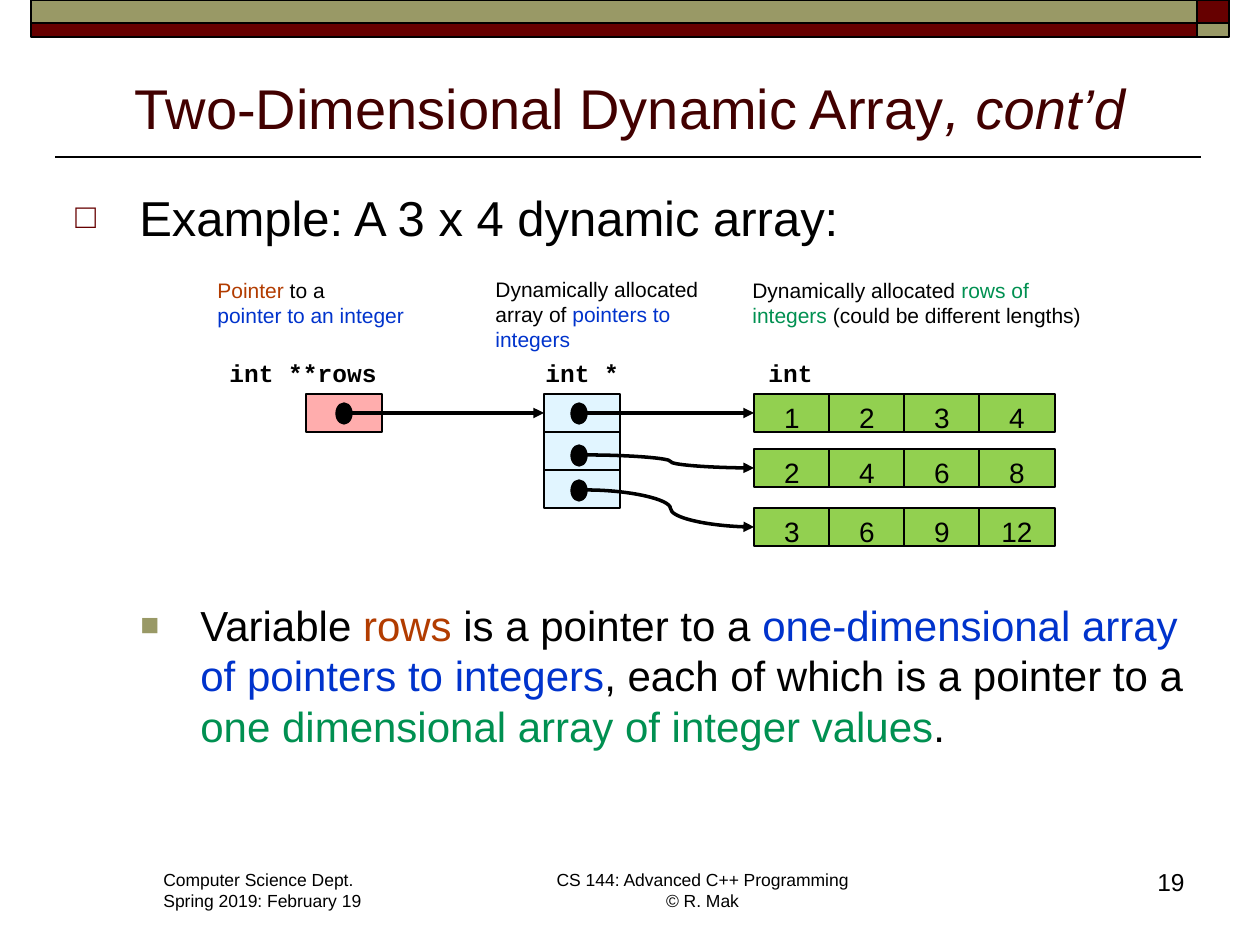
import lxml.etree
import pptx
import pptx.dml.color
import pptx.enum.shapes
import pptx.enum.text
import pptx.oxml.ns
import pptx.util

PX = 914400 / 126
HUE = {
    "black": "000000", "maroon": "660000", "olive": "999966", "title": "420000",
    "rust": "B23C00", "blue": "0033CC", "green": "009051",
    "pink": "FFADAD", "pale": "E1F5FF", "lime": "92D050",
}
RGB = pptx.dml.color.RGBColor.from_string
KIND = pptx.enum.shapes.MSO_SHAPE
LINK = pptx.enum.shapes.MSO_CONNECTOR
ALIGN = pptx.enum.text.PP_ALIGN
tag = pptx.oxml.ns.qn

deck = pptx.Presentation()
deck.slide_width = int(1260 * PX)
deck.slide_height = int(945 * PX)
slide = deck.slides.add_slide(deck.slide_layouts[5])
shapes = slide.shapes


def draw(kind, x, y, w, h, fill, line=0.75):
    shape = shapes.add_shape(kind, *[int(n * PX) for n in (x, y, w, h)])
    shape.shadow.inherit = False
    shape.fill.solid()
    shape.fill.fore_color.rgb = RGB(HUE[fill])
    shape.line.color.rgb = RGB(HUE["black"])
    shape.line.width = pptx.util.Pt(line)
    return shape


def write(x, y, w, h, paras, size, font="Arial", align=ALIGN.LEFT, bold=False, bullet=None):
    box = shapes.add_textbox(*[int(n * PX) for n in (x, y, w, h)])
    frame = box.text_frame
    frame.word_wrap = True
    for i, parts in enumerate(paras):
        para = frame.add_paragraph() if i else frame.paragraphs[0]
        para.alignment = align
        if bullet:
            char, hue, scale, left, hang = bullet
            props = para._p.get_or_add_pPr()
            props.set("marL", str(int(left * PX)))
            props.set("indent", str(int(-hang * PX)))
            clr = lxml.etree.SubElement(props, tag("a:buClr"))
            lxml.etree.SubElement(clr, tag("a:srgbClr"), val=HUE[hue])
            lxml.etree.SubElement(props, tag("a:buSzPct"), val=str(scale * 1000))
            lxml.etree.SubElement(props, tag("a:buFont"), typeface="Arial")
            lxml.etree.SubElement(props, tag("a:buChar"), char=char)
        for text, hue in parts:
            if text == "\n":
                para.add_line_break()
                continue
            run = para.add_run()
            run.text = text
            run.font.name = font
            run.font.size = pptx.util.Pt(size)
            run.font.bold = bold
            run.font.color.rgb = RGB(HUE[hue])


bars = [
    (1197, 0, 32, 23, "maroon"), (31, 0, 1166, 23, "olive"),
    (31, 23, 1166, 14, "maroon"), (1197, 23, 32, 14, "olive"),
]
for x, y, w, h, hue in bars:
    draw(KIND.RECTANGLE, x, y, w, h, hue, 1)

title = shapes.title
title.left, title.top, title.width, title.height = [int(n * PX) for n in (63, 57, 1134, 90)]
frame = title.text_frame
frame.text = "Two-Dimensional Dynamic Array"
frame.auto_size = pptx.enum.text.MSO_AUTO_SIZE.NONE
frame.vertical_anchor = pptx.enum.text.MSO_ANCHOR.BOTTOM
para = frame.paragraphs[0]
para.alignment = ALIGN.CENTER
tail = para.add_run()
tail.text = ", cont’d"
tail.font.italic = True
for run in para.runs:
    run.font.name = "Arial"
    run.font.size = pptx.util.Pt(32)
    run.font.color.rgb = RGB(HUE["title"])

write(63, 181, 1134, 70, [[("Example: A 3 x 4 dynamic array:", "black")]], 28,
      bullet=("□", "maroon", 70, 64, 64))
write(63, 593, 1140, 170, [[
    ("Variable ", "black"), ("rows", "rust"), (" is a pointer to a ", "black"),
    ("one-dimensional array of pointers to integers", "blue"),
    (", each of which is a pointer to a ", "black"),
    ("one dimensional array of integer values", "green"), (".", "black"),
]], 24, bullet=("■", "olive", 75, 125, 60))

write(205, 271, 220, 63, [[
    ("Pointer", "rust"), (" to a", "black"), ("\n", ""), ("pointer to an integer", "blue"),
]], 12)
write(483, 270, 236, 89, [
    [("Dynamically allocated", "black")],
    [("array of ", "black"), ("pointers to", "blue"), ("\n", ""), ("integers", "blue")],
], 12)
write(740, 271, 360, 63, [[
    ("Dynamically allocated ", "black"), ("rows of", "green"), ("\n", ""),
    ("integers", "green"), (" (could be different lengths)", "black"),
]], 12)
for x, w, code in [(217, 185, "int **rows"), (533, 110, "int *"), (756, 80, "int")]:
    write(x, 352, w, 43, [[(code, "black")]], 14, "Courier New", bold=True)

draw(KIND.RECTANGLE, 306, 394, 76, 38, "pink")
slots = [draw(KIND.RECTANGLE, 544, 394 + 38 * i, 76, 38, "pale") for i in range(3)]
heads = []
for row, y in enumerate((394, 449, 508), 1):
    for col in range(4):
        cell = draw(KIND.RECTANGLE, 754 + 75 * col, y, 76, 38, "lime")
        frame = cell.text_frame
        frame.text = str(row * (col + 1))
        frame.vertical_anchor = pptx.enum.text.MSO_ANCHOR.TOP
        para = frame.paragraphs[0]
        para.alignment = ALIGN.CENTER
        font = para.runs[0].font
        font.name = "Arial"
        font.size = pptx.util.Pt(16)
        font.color.rgb = RGB(HUE["black"])
        if col == 0:
            heads.append(cell)

lines = [(LINK.STRAIGHT, 1201, 157, 55, 157, 1, None)]
arrows = [
    (LINK.STRAIGHT, 336, 413, slots[0]), (LINK.STRAIGHT, 571, 413, heads[0]),
    (LINK.CURVE, 571, 455, heads[1]), (LINK.CURVE, 571, 490, heads[2]),
]
for kind, x, y, goal in arrows:
    draw(KIND.OVAL, x, y - 10, 16, 21, "black")
    lines.append((kind, x + 16, y, x + 100, y, 2, goal))
for kind, x, y, right, low, width, goal in lines:
    link = shapes.add_connector(kind, *[int(n * PX) for n in (x, y, right, low)])
    link.line.color.rgb = RGB(HUE["black"])
    link.line.width = pptx.util.Pt(width)
    if goal is not None:
        link.end_connect(goal, 1)
        lxml.etree.SubElement(link.line._get_or_add_ln(), tag("a:tailEnd"), type="triangle")
    lxml.etree.SubElement(link._element.spPr, tag("a:effectLst"))

write(151, 863, 235, 55, [
    [("Computer Science Dept.", "black")], [("Spring 2019: February 19", "black")],
], 10)
write(537, 863, 331, 55, [[
    ("CS 144: Advanced C++ Programming", "black"), ("\n", ""), ("© R. Mak", "black"),
]], 10, align=ALIGN.CENTER)
write(1109, 861, 88, 63, [[("19", "black")]], 14, align=ALIGN.RIGHT)

deck.save("out.pptx")
